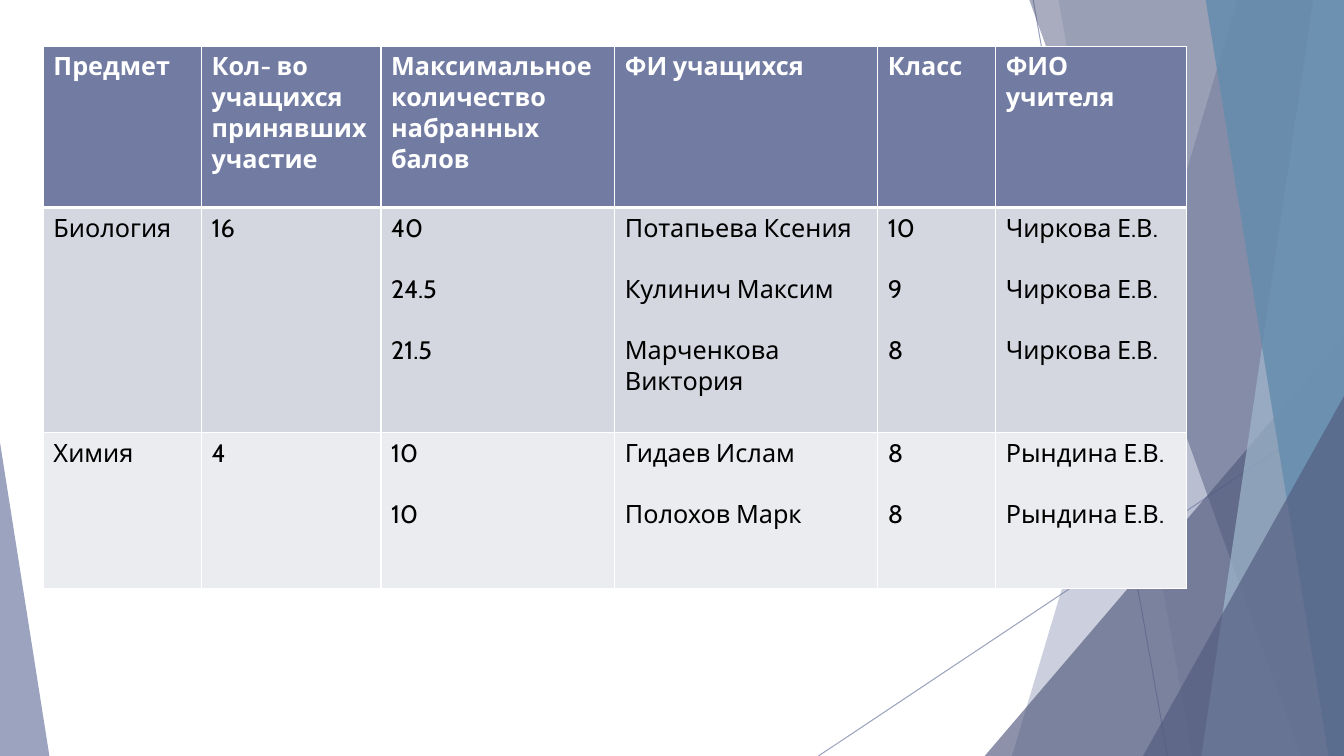
import pptx
import pptx.util
import pptx.dml.color
import pptx.enum.shapes
import pptx.oxml.ns
import lxml.etree
from dataclasses import dataclass

Pt = pptx.util.Pt
qn = pptx.oxml.ns.qn
WIDE, HIGH = 960, 540


@dataclass
class Theme:
    font: str = "Cabin"
    size: float = 18
    gap: float = 21.9
    main: str = "727CA3"
    dark: str = "525B7E"
    pale: str = "9FB8CD"
    blue: str = "638CAE"
    white: str = "FFFFFF"
    black: str = "000000"
    bands: tuple = ("D5D7E0", "EBECF0")


def color(code):
    return pptx.dml.color.RGBColor.from_string(code)


class Painter:
    def __init__(self, slide, theme):
        self.slide = slide
        self.theme = theme

    def fade(self, root, alpha):
        for node in root.iter(qn("a:srgbClr")):
            lxml.etree.SubElement(node, qn("a:alpha")).set("val", str(alpha * 1000))

    def paint(self, shape, code, alpha):
        shape.shadow.inherit = False
        shape.fill.solid()
        shape.fill.fore_color.rgb = color(code)
        shape.line.fill.background()
        self.fade(shape.element.spPr, alpha)

    def line(self, start, end):
        line = self.slide.shapes.add_connector(
            pptx.enum.shapes.MSO_CONNECTOR.STRAIGHT, *map(Pt, start + end))
        line.line.color.rgb = color(self.theme.main)
        line.line.width = Pt(0.75)
        props = line.element.spPr
        self.fade(props, 70)
        lxml.etree.SubElement(props, qn("a:effectLst"))

    def panel(self, top, base, code, alpha):
        form = self.slide.shapes.build_freeform(Pt(top), Pt(-0.6), scale=1.0)
        corners = [(WIDE, -0.6), (WIDE, HIGH), (base, HIGH)]
        form.add_line_segments([(Pt(x), Pt(y)) for x, y in corners], close=True)
        self.paint(form.convert_to_shape(), code, alpha)

    def wedge(self, left, top, right, peak, code, alpha):
        shape = self.slide.shapes.add_shape(
            pptx.enum.shapes.MSO_SHAPE.ISOSCELES_TRIANGLE,
            Pt(left), Pt(top), Pt(right - left), Pt(HIGH - top))
        shape.adjustments[0] = peak
        self.paint(shape, code, alpha)

    def edge(self, cell, row):
        props = cell.fill._xPr
        widths = {"L": 1, "R": 1, "T": 3 if row == 1 else 1, "B": 1 if row else 3}
        for place, (side, width) in enumerate(widths.items()):
            line = lxml.etree.Element(qn("a:ln" + side), w=str(Pt(width)))
            fill = lxml.etree.SubElement(line, qn("a:solidFill"))
            lxml.etree.SubElement(fill, qn("a:srgbClr")).set("val", self.theme.white)
            props.insert(place, line)

    def cell(self, cell, text, row):
        theme = self.theme
        cell.text = text
        cell.fill.solid()
        cell.fill.fore_color.rgb = color(theme.bands[row - 1] if row else theme.main)
        for place, para in enumerate(cell.text_frame.paragraphs):
            font = para.font
            font.name = theme.font
            font.size = Pt(theme.size)
            font.bold = row == 0
            font.color.rgb = color(theme.black if row else theme.white)
            if row and place:
                para.space_before = Pt(theme.gap)
        self.edge(cell, row)

    def table(self, left, top, widths, heights, rows):
        frame = self.slide.shapes.add_table(
            len(rows), len(widths), Pt(left), Pt(top), Pt(sum(widths)), Pt(sum(heights)))
        table = frame.table
        table.horz_banding = False
        for column, width in zip(table.columns, widths):
            column.width = Pt(width)
        for row, height in zip(table.rows, heights):
            row.height = Pt(height)
        for r, texts in enumerate(rows):
            for c, text in enumerate(texts):
                self.cell(table.cell(r, c), text, r)


def main():
    deck = pptx.Presentation()
    deck.slide_width, deck.slide_height = Pt(WIDE), Pt(HIGH)
    theme = Theme()
    page = Painter(deck.slides.add_slide(deck.slide_layouts[6]), theme)

    page.line((738, 0), (834, HIGH))
    page.line((WIDE, 290), (584.6, HIGH))
    page.panel(884.2, 722.9, theme.main, 36)
    page.panel(756, 851.8, theme.main, 20)
    page.wedge(703.4, 239.8, WIDE, 1, theme.dark, 66)
    page.panel(735.1, 929.5, theme.dark, 50)
    page.panel(938.2, 858.2, theme.pale, 70)
    page.panel(861.1, 949, theme.blue, 80)
    page.wedge(816.5, 283, WIDE, 1, theme.dark, 66)
    page.wedge(0, 316.1, 35.3, 0, theme.main, 70)

    rows = [
        ["Предмет", "Кол- во\nучащихся\nпринявших\nучастие",
         "Максимальное количество\nнабранных\nбалов",
         "ФИ учащихся", "Класс", "ФИО учителя"],
        ["Биология", "16", "40\n24.5\n21.5",
         "Потапьева Ксения\nКулинич Максим\nМарченкова Виктория",
         "10\n9\n8", "\n".join(["Чиркова Е.В."] * 3)],
        ["Химия", "4", "10\n10", "Гидаев Ислам\nПолохов Марк",
         "8\n8", "\n".join(["Рындина Е.В."] * 2)],
    ]
    page.table(31, 33.1, [113, 128.2, 167, 187.9, 84.2, 136.1],
               [115.2, 160.8, 111.4], rows)
    deck.save("out.pptx")


if __name__ == "__main__":
    main()
